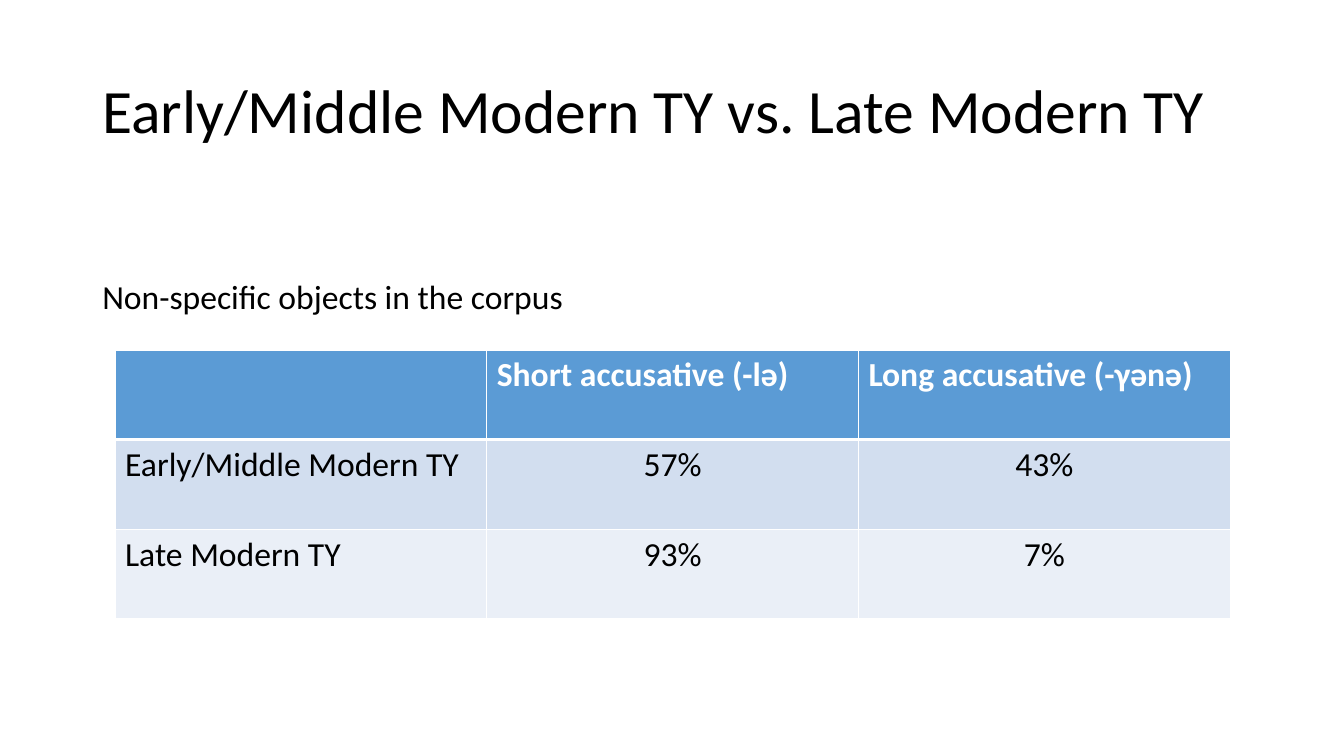
from lxml import etree
from pptx import Presentation
from pptx.dml.color import RGBColor
from pptx.enum.text import MSO_ANCHOR as Anchor, PP_ALIGN as Align
from pptx.oxml.ns import qn
from pptx.util import Pt

# Content
TITLE = "Early/Middle Modern TY vs. Late Modern TY"
CAPTION = "Non-specific objects in the corpus"
ROWS = [
    ("", "Short accusative (-lə)", "Long accusative (-γənə)"),
    ("Early/Middle Modern TY", "57%", "43%"),
    ("Late Modern TY", "93%", "7%"),
]
ROW_FILLS = ["5B9BD5", "D2DEEF", "EAEFF7"]

# Layout in points
TEXT_LEFT, TEXT_WIDTH = 66, 828
TABLE_LEFT, TABLE_TOP = 82.2, 250
COLUMN_WIDTH, ROW_HEIGHT = 265.5, 64


def color(value):
    return RGBColor.from_string(value)


def write(frame, text, size=24, ink="000000", bold=False,
          align=Align.LEFT, spacing=1.0):
    frame.word_wrap = True
    paragraph = frame.paragraphs[0]
    paragraph.alignment = align
    paragraph.line_spacing = spacing
    run = paragraph.add_run()
    run.text = text
    font = run.font
    font.name, font.size, font.bold = "Calibri", Pt(size), bold
    font.color.rgb = color(ink)


def add_text_frame(top, height):
    box = slide.shapes.add_textbox(Pt(TEXT_LEFT), Pt(top), Pt(TEXT_WIDTH), Pt(height))
    return box.text_frame


def set_borders(cell, widths):
    properties = cell._tc.get_or_add_tcPr()
    for index, (side, width) in enumerate(widths.items()):
        line = etree.Element(qn(f"a:{side}"), w=str(Pt(width)))
        fill = etree.SubElement(line, qn("a:solidFill"))
        etree.SubElement(fill, qn("a:srgbClr"), val="FFFFFF")
        properties.insert(index, line)


presentation = Presentation()
presentation.slide_width, presentation.slide_height = Pt(960), Pt(540)
slide = presentation.slides.add_slide(presentation.slide_layouts[6])

# Title and caption
title_frame = add_text_frame(28.8, 104.4)
title_frame.vertical_anchor = Anchor.MIDDLE
write(title_frame, TITLE, size=44, spacing=0.9)

caption_frame = add_text_frame(125.3, 406.8)
caption_frame.margin_top = Pt(72)
write(caption_frame, CAPTION)

# Table
row_count, column_count = len(ROWS), len(ROWS[0])
table = slide.shapes.add_table(
    row_count, column_count, Pt(TABLE_LEFT), Pt(TABLE_TOP),
    Pt(COLUMN_WIDTH * column_count), Pt(ROW_HEIGHT * row_count)).table
for column in table.columns:
    column.width = Pt(COLUMN_WIDTH)
for row_index, (texts, row_fill) in enumerate(zip(ROWS, ROW_FILLS)):
    table.rows[row_index].height = Pt(ROW_HEIGHT)
    header = row_index == 0
    for column_index, text in enumerate(texts):
        cell = table.cell(row_index, column_index)
        cell.fill.solid()
        cell.fill.fore_color.rgb = color(row_fill)
        set_borders(cell, {"lnL": 1, "lnR": 1,
                           "lnT": 3 if row_index == 1 else 1,
                           "lnB": 3 if header else 1})
        if text:
            centered = column_index > 0 and not header
            write(cell.text_frame, text, bold=header,
                  ink="FFFFFF" if header else "000000",
                  align=Align.CENTER if centered else Align.LEFT)

presentation.save("out.pptx")
